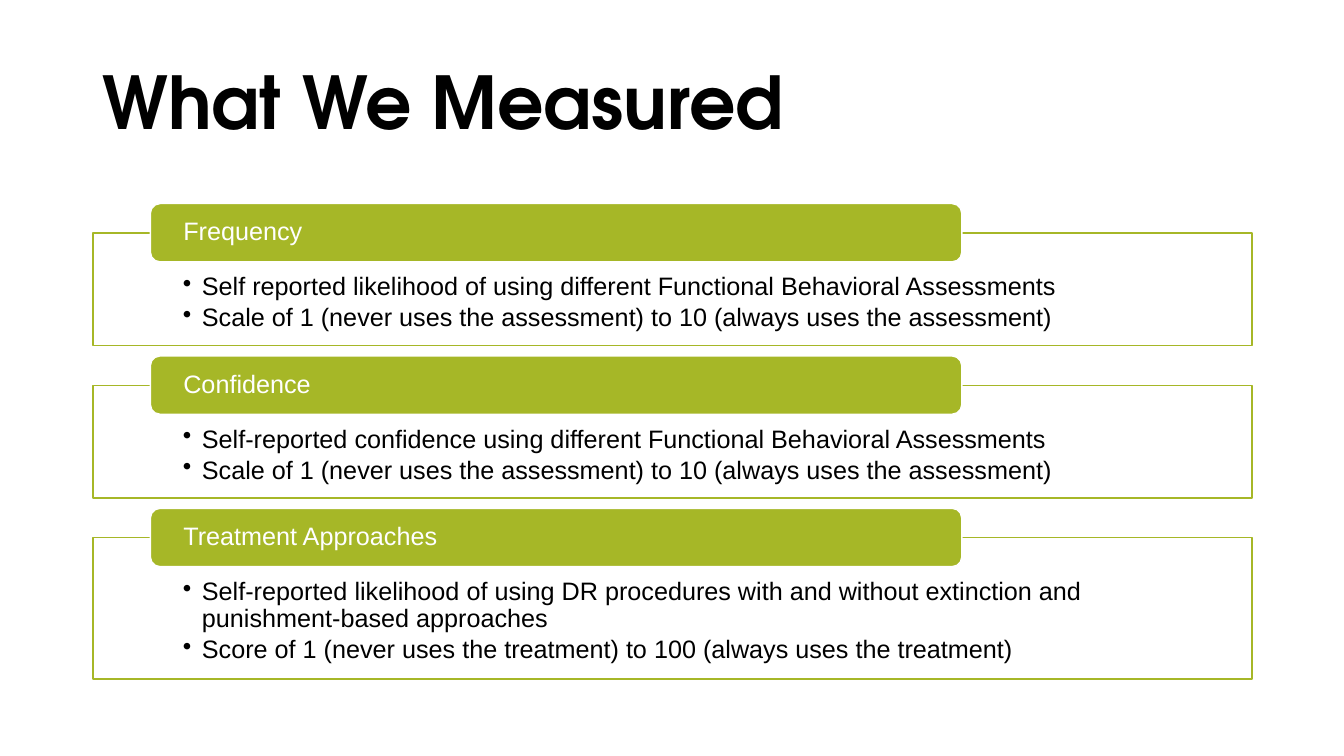
from dataclasses import dataclass

from lxml.etree import SubElement
from pptx import Presentation
from pptx.dml.color import RGBColor
from pptx.enum.shapes import MSO_SHAPE as Preset
from pptx.enum.text import MSO_ANCHOR as Anchor, PP_ALIGN as Align
from pptx.oxml.ns import qn
from pptx.shapes.autoshape import Shape
from pptx.slide import Slide
from pptx.util import Cm, Pt

COLORS = {"lime": "A6B727", "white": "FFFFFF", "black": "000000"}

# Layout in centimetres
LEFT, WIDTH = 2.34, 29.21
FIRST_TOP, GAP = 5.87, 1.0
TAB_LEFT, TAB_WIDTH, TAB_HEIGHT, TAB_RISE = 3.79, 20.45, 1.47, 0.74
BULLET_INDENT = 0.48


@dataclass
class Measure:
    heading: str
    details: list[str]
    height: float


MEASURES = [
    Measure("Frequency", [
        "Self reported likelihood of using different Functional Behavioral Assessments",
        "Scale of 1 (never uses the assessment) to 10 (always uses the assessment)",
    ], 2.84),
    Measure("Confidence", [
        "Self-reported confidence using different Functional Behavioral Assessments",
        "Scale of 1 (never uses the assessment) to 10 (always uses the assessment)",
    ], 2.84),
    Measure("Treatment Approaches", [
        "Self-reported likelihood of using DR procedures with and without extinction "
        "and punishment-based approaches",
        "Score of 1 (never uses the treatment) to 100 (always uses the treatment)",
    ], 3.56),
]


def rgb(name: str) -> RGBColor:
    return RGBColor.from_string(COLORS[name])


def write(shape: Shape, lines: list[str], *, size: float = 18, font: str = "Arial",
          color: str = "black", bold: bool = False, bullets: bool = False,
          anchor: Anchor = Anchor.TOP, after: float = 0,
          insets: tuple[float, float, float, float] = (0.25, 0.13, 0.25, 0.13)) -> None:
    """Fill a shape with paragraphs; insets are left, top, right, bottom in cm."""
    frame = shape.text_frame
    frame.word_wrap = True
    frame.vertical_anchor = anchor
    (frame.margin_left, frame.margin_top,
     frame.margin_right, frame.margin_bottom) = map(Cm, insets)
    for index, line in enumerate(lines):
        paragraph = frame.paragraphs[0] if index == 0 else frame.add_paragraph()
        paragraph.text = line
        paragraph.alignment = Align.LEFT
        paragraph.line_spacing = 0.9
        paragraph.space_after = Pt(after)
        if bullets:
            paragraph.level = 1
            properties = paragraph._p.get_or_add_pPr()
            properties.set("marL", str(Cm(BULLET_INDENT)))
            properties.set("indent", str(-Cm(BULLET_INDENT)))
            SubElement(properties, qn("a:buChar"), char="•")
        style = paragraph.font
        style.size, style.name, style.bold = Pt(size), font, bold
        style.color.rgb = rgb(color)


def add_block(slide: Slide, preset: Preset, left: float, top: float, width: float,
              height: float, fill: str, line: str) -> Shape:
    block = slide.shapes.add_shape(preset, Cm(left), Cm(top), Cm(width), Cm(height))
    block.shadow.inherit = False
    block.fill.solid()
    block.fill.fore_color.rgb = rgb(fill)
    block.line.color.rgb = rgb(line)
    block.line.width = Pt(1)
    return block


def add_measure(slide: Slide, measure: Measure, top: float) -> None:
    # Outlined panel with the details
    panel = add_block(slide, Preset.RECTANGLE, LEFT, top, WIDTH, measure.height,
                      "white", "lime")
    write(panel, measure.details, bullets=True, after=2.7,
          insets=(2.27, 1.04, 2.27, 0.36))
    # Heading tab over the panel's top edge
    tab = add_block(slide, Preset.ROUNDED_RECTANGLE, TAB_LEFT, top - TAB_RISE,
                    TAB_WIDTH, TAB_HEIGHT, "lime", "white")
    write(tab, [measure.heading], color="white", anchor=Anchor.MIDDLE,
          insets=(0.76, 0, 0.76, 0))


def main() -> None:
    deck = Presentation()
    deck.slide_width, deck.slide_height = Cm(33.87), Cm(19.05)
    slide = deck.slides.add_slide(deck.slide_layouts[6])

    # Title
    title = slide.shapes.add_textbox(Cm(LEFT), Cm(1.55), Cm(WIDTH), Cm(3.15))
    write(title, ["What We Measured"], size=52, font="TeX Gyre Adventor", bold=True)

    # Stacked measures
    top = FIRST_TOP
    for measure in MEASURES:
        add_measure(slide, measure, top)
        top += measure.height + GAP

    deck.save("out.pptx")


if __name__ == "__main__":
    main()
